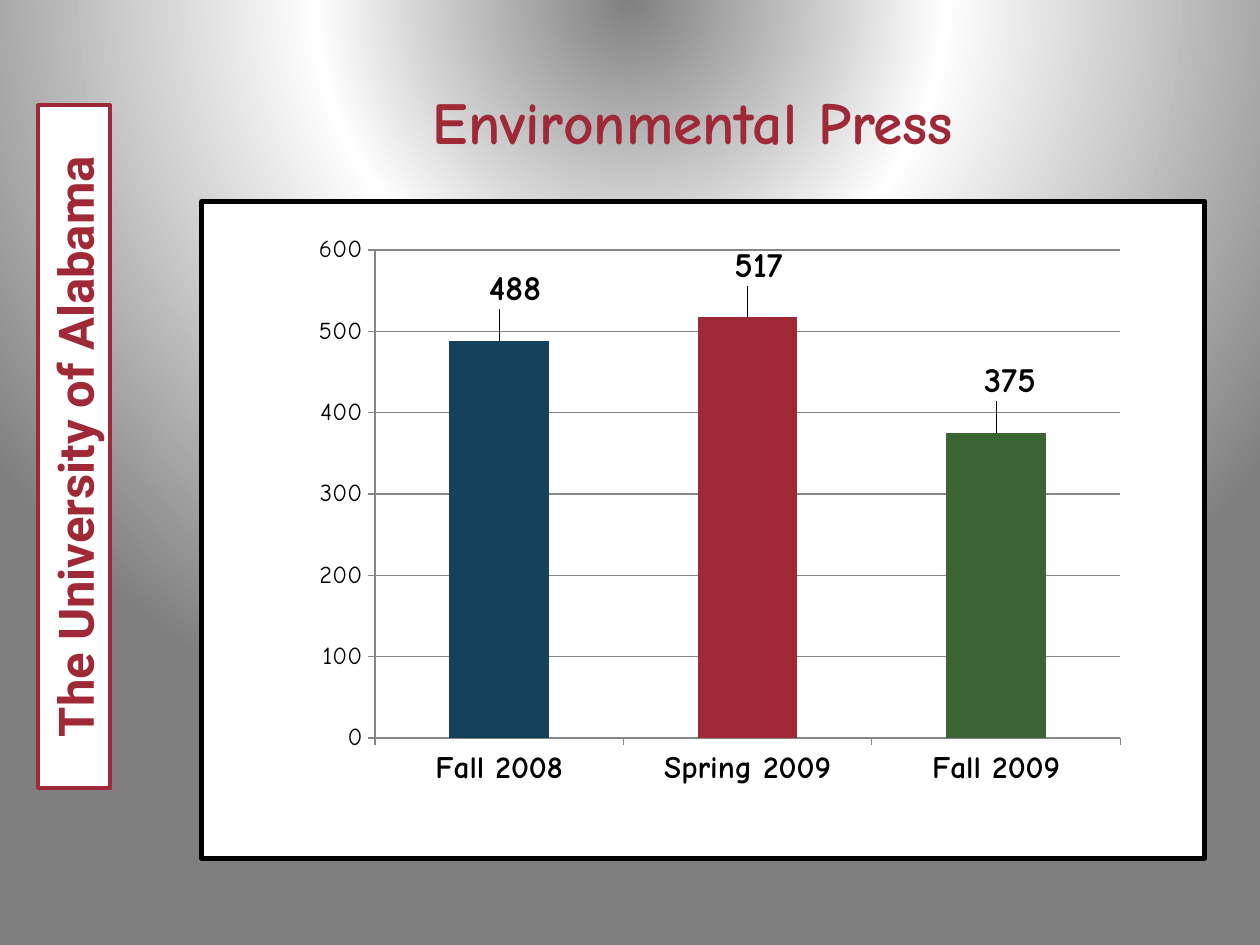
from dataclasses import dataclass

from lxml import etree
from pptx import Presentation
from pptx.chart.data import CategoryChartData
from pptx.dml.color import RGBColor
from pptx.enum.chart import XL_CHART_TYPE, XL_LABEL_POSITION, XL_TICK_MARK
from pptx.enum.shapes import MSO_SHAPE
from pptx.enum.text import MSO_ANCHOR, PP_ALIGN
from pptx.oxml import parse_xml
from pptx.util import Inches, Pt

COLUMN_CLUSTERED = XL_CHART_TYPE.COLUMN_CLUSTERED
OUTSIDE_END = XL_LABEL_POSITION.OUTSIDE_END
TICK_OUTSIDE = XL_TICK_MARK.OUTSIDE
RECTANGLE = MSO_SHAPE.RECTANGLE
MIDDLE = MSO_ANCHOR.MIDDLE
CENTER = PP_ALIGN.CENTER

A = "http://schemas.openxmlformats.org/drawingml/2006/main"
C = "http://schemas.openxmlformats.org/drawingml/2006/chart"
P = "http://schemas.openxmlformats.org/presentationml/2006/main"

TITLE_FONT = "Comic Neue"
COLORS = {
    "crimson": "9F2936",
    "navy": "14425D",
    "green": "3B6432",
    "orange": "F07F09",
    "white": "FFFFFF",
    "black": "000000",
    "grid": "868686",
}
BACKGROUND_STOPS = [(0, "808080"), (40, "FEFEFE"), (100, "7F7F7F")]


@dataclass
class Semester:
    name: str
    count: int
    color: str
    label_shift: tuple[float, float]


SEMESTERS = [
    Semester("Fall 2008", 488, "navy", (0.016, -0.04)),
    Semester("Spring 2009", 517, "crimson", (0.011, -0.04)),
    Semester("Fall 2009", 375, "green", (0.014, -0.04)),
]


def rgb(name: str) -> RGBColor:
    return RGBColor.from_string(COLORS[name])


def style_font(font, name: str, size: float, color: str, bold: bool = False) -> None:
    font.name = name
    font.size = Pt(size)
    font.bold = bold
    font.color.rgb = rgb(color)


def write_line(shape, text: str, font_name: str, size: float) -> None:
    frame = shape.text_frame
    frame.word_wrap = True
    frame.vertical_anchor = MIDDLE
    frame.text = text
    paragraph = frame.paragraphs[0]
    paragraph.alignment = CENTER
    style_font(paragraph.runs[0].font, font_name, size, "crimson", True)


def set_background(slide) -> None:
    stops = "".join(
        f'<a:gs pos="{position * 1000}"><a:srgbClr val="{color}"/></a:gs>'
        for position, color in BACKGROUND_STOPS
    )
    background = parse_xml(
        f'<p:bg xmlns:p="{P}" xmlns:a="{A}"><p:bgPr><a:gradFill rotWithShape="1">'
        f'<a:gsLst>{stops}</a:gsLst><a:path path="circle">'
        '<a:fillToRect l="50000" t="-80000" r="50000" b="180000"/></a:path>'
        "</a:gradFill><a:effectLst/></p:bgPr></p:bg>"
    )
    slide.element.cSld.insert(0, background)


def manual_layout(x: float, y: float, size: tuple[float, float] | None = None):
    """Layout for the plot area when a size is given, otherwise a label shift."""
    settings = [("x", x), ("y", y)]
    if size:
        settings = [("layoutTarget", "inner"), ("xMode", "edge"), ("yMode", "edge"),
                    *settings, ("w", size[0]), ("h", size[1])]
    layout = etree.Element(f"{{{C}}}layout", nsmap={"c": C})
    manual = etree.SubElement(layout, f"{{{C}}}manualLayout")
    for tag, value in settings:
        etree.SubElement(manual, f"{{{C}}}{tag}", val=str(value))
    return layout


def frame_chart(chart) -> None:
    """White chart area with a black border, and a fixed plot area."""
    area = parse_xml(
        f'<c:spPr xmlns:c="{C}" xmlns:a="{A}"><a:solidFill><a:srgbClr val="{COLORS["white"]}"/>'
        f'</a:solidFill><a:ln w="{Pt(2.75)}"><a:solidFill><a:srgbClr val="{COLORS["black"]}"/>'
        "</a:solidFill></a:ln></c:spPr>"
    )
    chart.element.find(f"{{{C}}}chart").addnext(area)
    plot_area = chart.element.find(f".//{{{C}}}plotArea")
    for layout in plot_area.findall(f"{{{C}}}layout"):
        plot_area.remove(layout)
    plot_area.insert(0, manual_layout(0.173, 0.074, (0.743, 0.743)))


def style_axis(axis, size: float, bold: bool) -> None:
    axis.major_tick_mark = TICK_OUTSIDE
    axis.format.line.color.rgb = rgb("grid")
    axis.format.line.width = Pt(0.75)
    style_font(axis.tick_labels.font, TITLE_FONT, size, "black", bold)


def add_press_chart(slide) -> None:
    data = CategoryChartData()
    data.categories = [semester.name for semester in SEMESTERS]
    data.add_series("Series 1", [semester.count for semester in SEMESTERS])
    chart = slide.shapes.add_chart(
        COLUMN_CLUSTERED, Inches(1.58), Inches(1.58), Inches(8), Inches(5.25), data
    ).chart
    chart.has_legend = False
    chart.has_title = False
    style_font(chart.font, "Calibri", 10, "black")
    frame_chart(chart)

    # Axes and gridlines
    style_axis(chart.category_axis, 18, True)
    value_axis = chart.value_axis
    style_axis(value_axis, 14, False)
    value_axis.minimum_scale, value_axis.maximum_scale = 0, 600
    value_axis.major_unit = 100
    value_axis.has_major_gridlines = True
    value_axis.major_gridlines.format.line.color.rgb = rgb("grid")
    value_axis.major_gridlines.format.line.width = Pt(0.75)

    # Columns and their labels
    plot = chart.plots[0]
    plot.gap_width = 150
    plot.vary_by_categories = False
    series = plot.series[0]
    series.format.fill.solid()
    series.format.fill.fore_color.rgb = rgb("orange")
    labels = series.data_labels
    labels.show_value = True
    labels.position = OUTSIDE_END
    style_font(labels.font, TITLE_FONT, 20, "black", True)
    for index, semester in enumerate(SEMESTERS):
        point = series.points[index]
        point.format.fill.solid()
        point.format.fill.fore_color.rgb = rgb(semester.color)
        point.data_label.position = OUTSIDE_END
        style_font(point.data_label.font, TITLE_FONT, 20, "black", True)
    label_indexes = chart.element.findall(f".//{{{C}}}dLbl/{{{C}}}idx")
    for label_index, semester in zip(label_indexes, SEMESTERS):
        label_index.addnext(manual_layout(*semester.label_shift))


def main() -> None:
    presentation = Presentation()
    presentation.slide_width = Inches(10)
    presentation.slide_height = Inches(7.5)
    slide = presentation.slides.add_slide(presentation.slide_layouts[6])
    set_background(slide)

    # University banner along the left edge
    banner = slide.shapes.add_shape(
        RECTANGLE, Inches(-2.12), Inches(3.26), Inches(5.42), Inches(0.57)
    )
    banner.rotation = 270
    banner.shadow.inherit = False
    banner.fill.solid()
    banner.fill.fore_color.rgb = rgb("white")
    banner.line.color.rgb = rgb("crimson")
    banner.line.width = Pt(2.25)
    write_line(banner, "The University of Alabama", "Roboto", 28)

    # Title
    title = slide.shapes.add_textbox(Inches(1.5), Inches(0.33), Inches(8), Inches(1.25))
    write_line(title, "Environmental Press", TITLE_FONT, 34)

    add_press_chart(slide)
    presentation.save("out.pptx")


if __name__ == "__main__":
    main()
